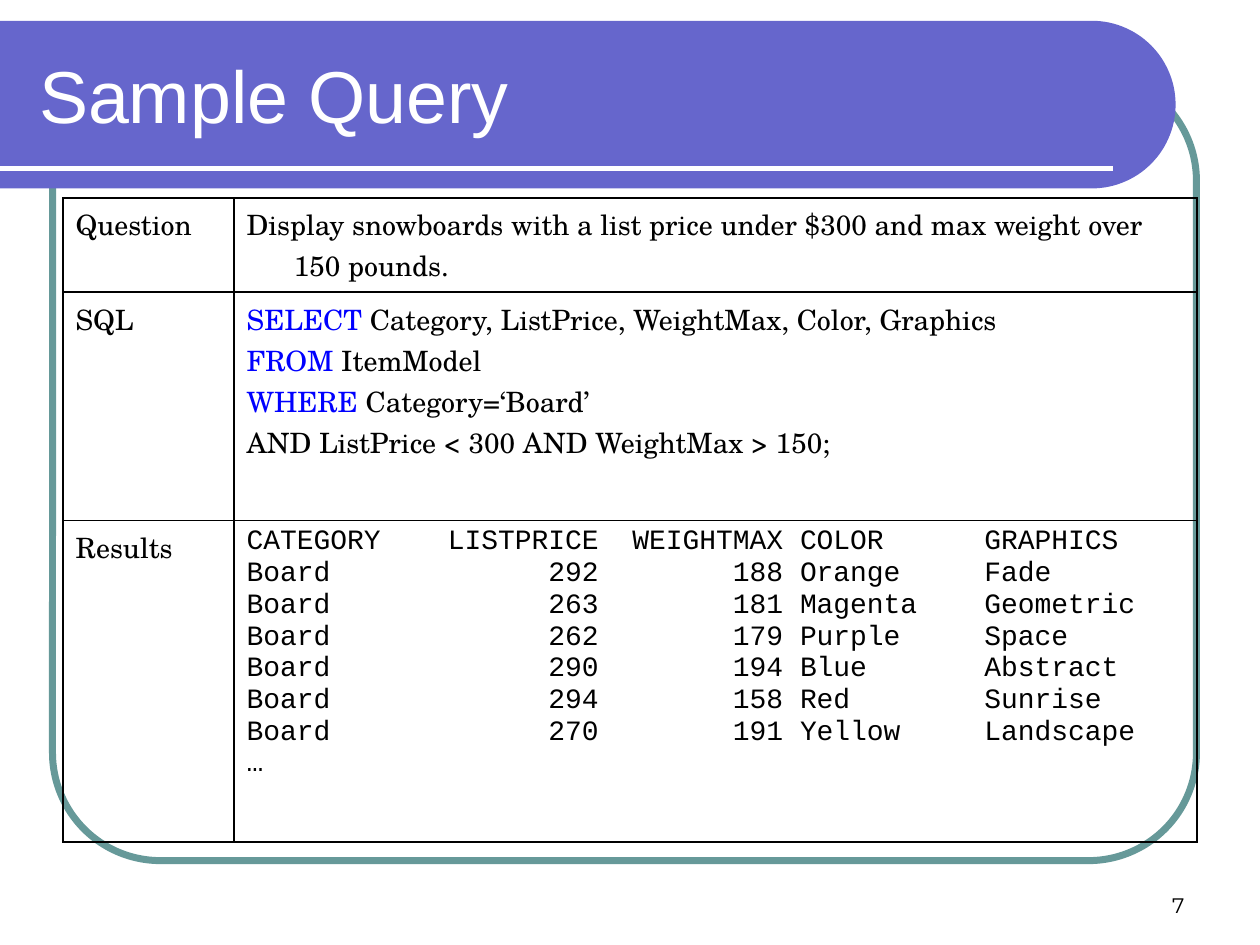
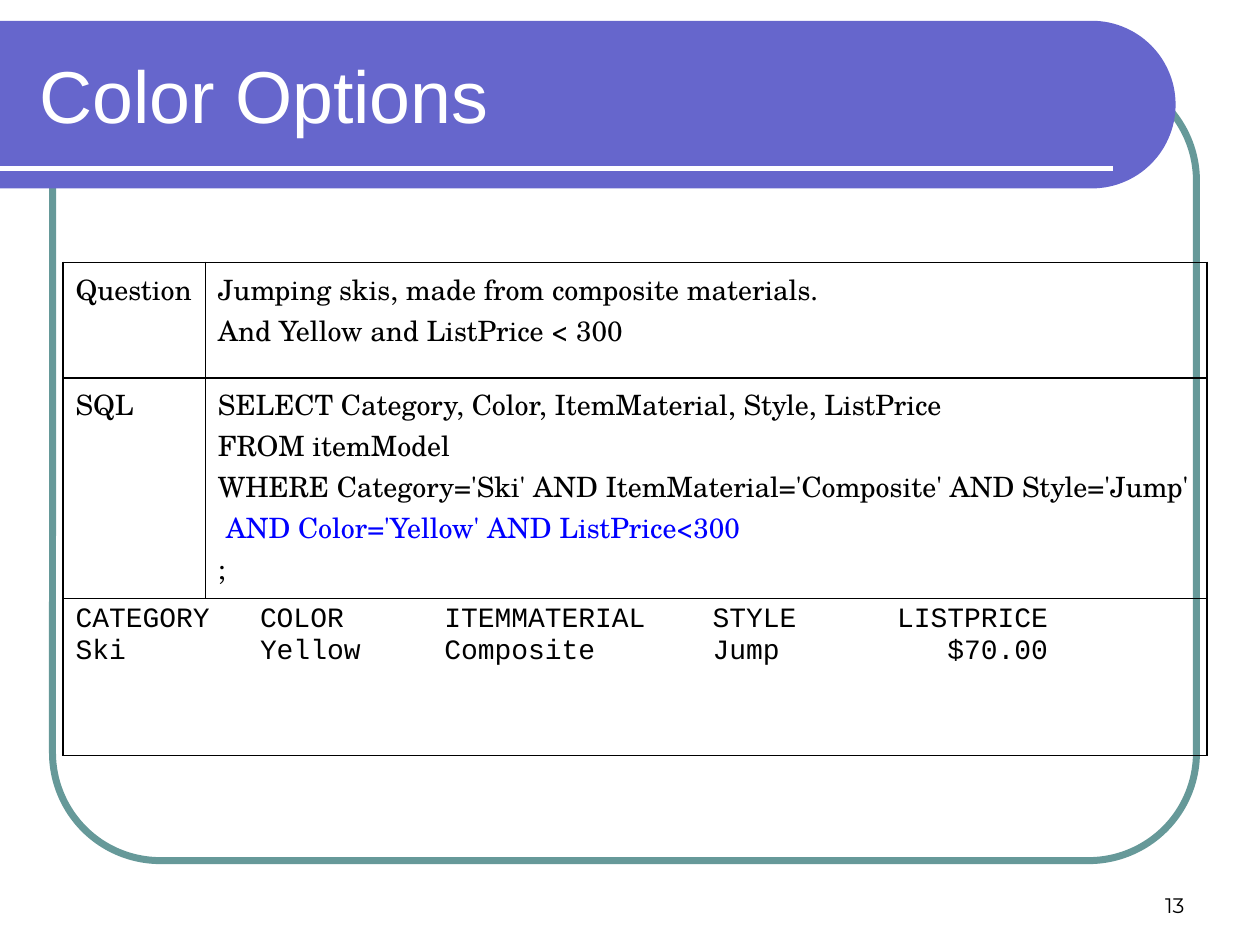
import math
from lxml import etree
from pptx import Presentation
from pptx import util as u
from pptx.dml.color import RGBColor
from pptx.enum import shapes, text
from pptx.oxml.ns import qn

Cm, Pt = u.Cm, u.Pt

BLACK = RGBColor(0x00, 0x00, 0x00)
WHITE = RGBColor(0xFF, 0xFF, 0xFF)
KEYWORD_BLUE = RGBColor(0x00, 0x00, 0xFF)
BAND_VIOLET = RGBColor(0x66, 0x66, 0xCC)
FRAME_TEAL = RGBColor(0x66, 0x99, 0x99)

TITLE_FONT, BODY_FONT, RESULT_FONT, NUMBER_FONT = "Arial", "TeX Gyre Schola", "Courier New", "Montserrat"
BODY_SIZE = 16
CHAR_WIDTH = Pt(9.58)
HANG = Cm(0.95)
HIGHLIGHT_MARK = "|"

SLIDES = [
    {
        "title": "Sample Query",
        "number": "7",
        "top": 3.99,
        "columns": (3.45, 19.41),
        "rows": (1.9, 4.6, 6.48),
        "question": ["Display snowboards with a list price under $300 and max weight over 150 pounds."],
        "sql": [
            "|SELECT| Category, ListPrice, WeightMax, Color, Graphics",
            "|FROM |ItemModel",
            "|WHERE| Category=‘Board’",
            "AND ListPrice < 300 AND WeightMax > 150;",
        ],
        "results_label": "Results",
        "stops": [(21, "r"), (32, "r"), (33, "l"), (44, "l")],
        "results": [
            ("CATEGORY", "LISTPRICE", "WEIGHTMAX", "COLOR", "GRAPHICS"),
            ("Board", "292", "188", "Orange", "Fade"),
            ("Board", "263", "181", "Magenta", "Geometric"),
            ("Board", "262", "179", "Purple", "Space"),
            ("Board", "290", "194", "Blue", "Abstract"),
            ("Board", "294", "158", "Red", "Sunrise"),
            ("Board", "270", "191", "Yellow", "Landscape"),
            ("…",),
        ],
    },
    {
        "title": "Color Options",
        "number": "13",
        "top": 5.29,
        "columns": (2.87, 20.19),
        "rows": (2.33, 4.44, 3.17),
        "question": ["Jumping skis, made from composite materials.", "And Yellow and ListPrice < 300"],
        "sql": [
            "SELECT Category, Color, ItemMaterial, Style, ListPrice",
            "FROM itemModel",
            "WHERE Category='Ski' AND ItemMaterial='Composite' AND Style='Jump'",
            " |AND Color='Yellow' AND ListPrice<300|",
            ";",
        ],
        "results_label": None,
        "stops": [(11, "l"), (22, "l"), (38, "l"), (58, "r")],
        "results": [
            ("CATEGORY", "COLOR", "ITEMMATERIAL", "STYLE", "LISTPRICE"),
            ("Ski", "Yellow", "Composite", "Jump", "$70.00"),
        ],
    },
]


def style(font, name, size, color):
    font.name = name
    font.size = Pt(size)
    font.color.rgb = color


def add_label(slide, box, words, name, size, color, anchor, align):
    frame = slide.shapes.add_textbox(*map(Cm, box)).text_frame
    frame.word_wrap = True
    frame.vertical_anchor = anchor
    line = frame.paragraphs[0]
    line.text = words
    line.alignment = align
    style(line.font, name, size, color)


def add_backdrop(slide):
    frame = slide.shapes.add_shape(
        shapes.MSO_SHAPE.ROUNDED_RECTANGLE, Cm(1.06), Cm(1.47), Cm(23.06), Cm(15.88))
    frame.adjustments[0] = 0.137
    frame.shadow.inherit = False
    frame.fill.background()
    frame.line.color.rgb = FRAME_TEAL
    frame.line.width = Pt(4)

    top, radius, straight = Cm(0.42), Cm(1.69), Cm(22.01)
    angles = [math.radians(a) for a in range(-90, 91, 3)]
    arc = [(straight + radius * math.cos(a), top + radius + radius * math.sin(a)) for a in angles]
    outline = slide.shapes.build_freeform(0, top)
    outline.add_line_segments(arc + [(0, top + 2 * radius)], close=True)
    band = outline.convert_to_shape()
    band.shadow.inherit = False
    band.fill.solid()
    band.fill.fore_color.rgb = BAND_VIOLET
    band.line.fill.background()

    rule = slide.shapes.add_connector(
        shapes.MSO_CONNECTOR.STRAIGHT, 0, Cm(3.39), Cm(22.44), Cm(3.39))
    rule.line.color.rgb = WHITE
    rule.line.width = Pt(3)
    etree.SubElement(rule._element.spPr, qn("a:effectLst"))


def add_borders(cell):
    props = cell._tc.get_or_add_tcPr()
    for side in ("lnL", "lnR", "lnT", "lnB"):
        border = etree.SubElement(props, qn(f"a:{side}"), w=str(Pt(1)))
        fill = etree.SubElement(border, qn("a:solidFill"))
        etree.SubElement(fill, qn("a:srgbClr"), val=str(BLACK))


def next_paragraph(frame, index):
    return frame.add_paragraph() if index else frame.paragraphs[0]


def write_prose(cell, lines):
    for index, line in enumerate(lines):
        paragraph = next_paragraph(cell.text_frame, index)
        props = paragraph._p.get_or_add_pPr()
        props.set("marL", str(HANG))
        props.set("indent", str(-HANG))
        style(paragraph.font, BODY_FONT, BODY_SIZE, BLACK)
        for part, words in enumerate(line.split(HIGHLIGHT_MARK)):
            if words:
                run = paragraph.add_run()
                run.text = words
                if part % 2:
                    run.font.color.rgb = KEYWORD_BLUE


def write_results(cell, records, stops):
    for index, record in enumerate(records):
        paragraph = next_paragraph(cell.text_frame, index)
        tabs = etree.SubElement(paragraph._p.get_or_add_pPr(), qn("a:tabLst"))
        for column, align in stops:
            etree.SubElement(tabs, qn("a:tab"), pos=str(column * CHAR_WIDTH), algn=align)
        paragraph.text = "\t".join(record)
        style(paragraph.font, RESULT_FONT, BODY_SIZE, BLACK)


def add_query_table(slide, query):
    columns, rows = query["columns"], query["rows"]
    table = slide.shapes.add_table(
        len(rows), len(columns), Cm(1.27), Cm(query["top"]), Cm(sum(columns)), Cm(sum(rows))).table
    table.first_row = table.horz_banding = False
    for column, width in zip(table.columns, columns):
        column.width = Cm(width)
    for row, height in zip(table.rows, rows):
        row.height = Cm(height)
    for cell in table.iter_cells():
        add_borders(cell)
        cell.fill.background()

    for row, (label, key) in enumerate([("Question", "question"), ("SQL", "sql")]):
        write_prose(table.cell(row, 0), [label])
        write_prose(table.cell(row, 1), query[key])
    if query["results_label"]:
        write_prose(table.cell(2, 0), [query["results_label"]])
        results = table.cell(2, 1)
    else:
        results = table.cell(2, 0)
        results.merge(table.cell(2, 1))
    write_results(results, query["results"], query["stops"])


def main():
    deck = Presentation()
    deck.slide_width, deck.slide_height = Cm(25.4), Cm(19.05)
    for query in SLIDES:
        slide = deck.slides.add_slide(deck.slide_layouts[6])
        add_backdrop(slide)
        add_label(slide, (18.21, 17.35, 5.92, 1.27), query["number"], NUMBER_FONT, 12, BLACK,
                  text.MSO_ANCHOR.BOTTOM, text.PP_ALIGN.RIGHT)
        add_label(slide, (0.54, 0.62, 22.28, 2.54), query["title"], TITLE_FONT, 42, WHITE,
                  text.MSO_ANCHOR.MIDDLE, text.PP_ALIGN.LEFT)
        add_query_table(slide, query)
    deck.save("out.pptx")


if __name__ == "__main__":
    main()
